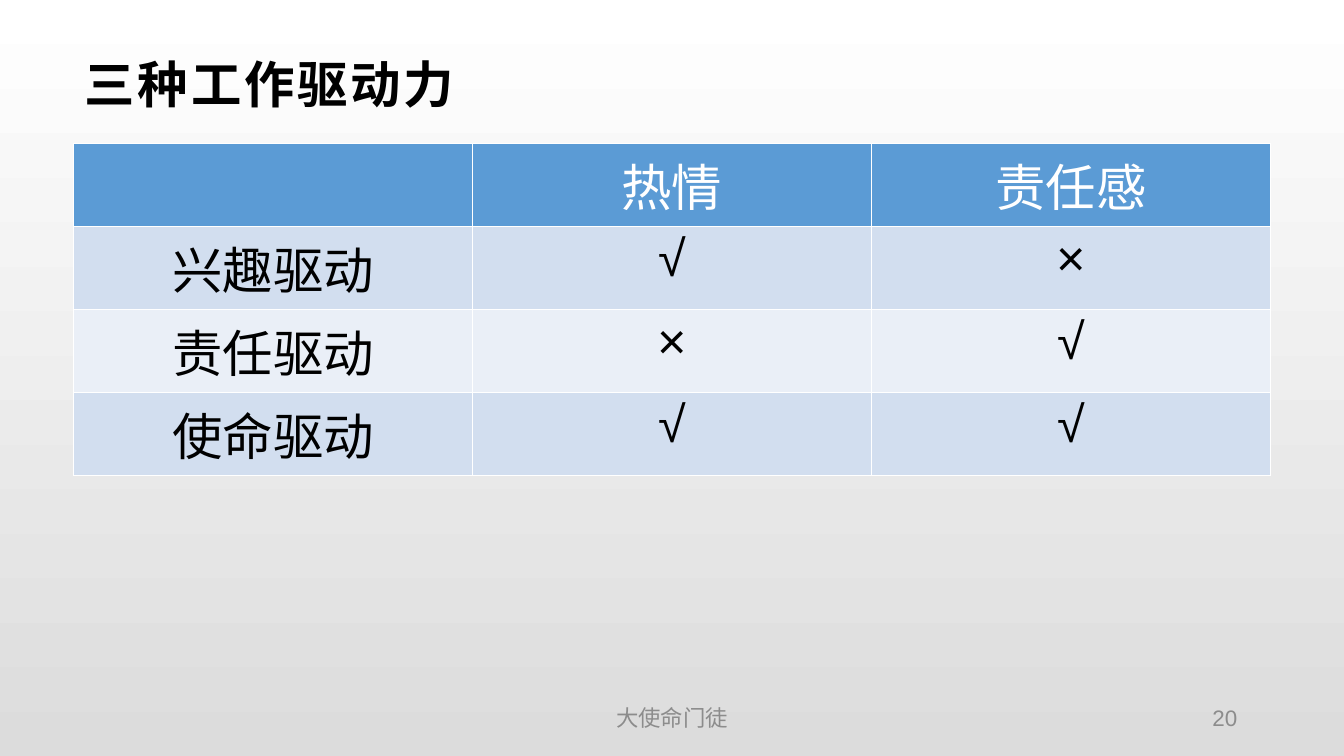
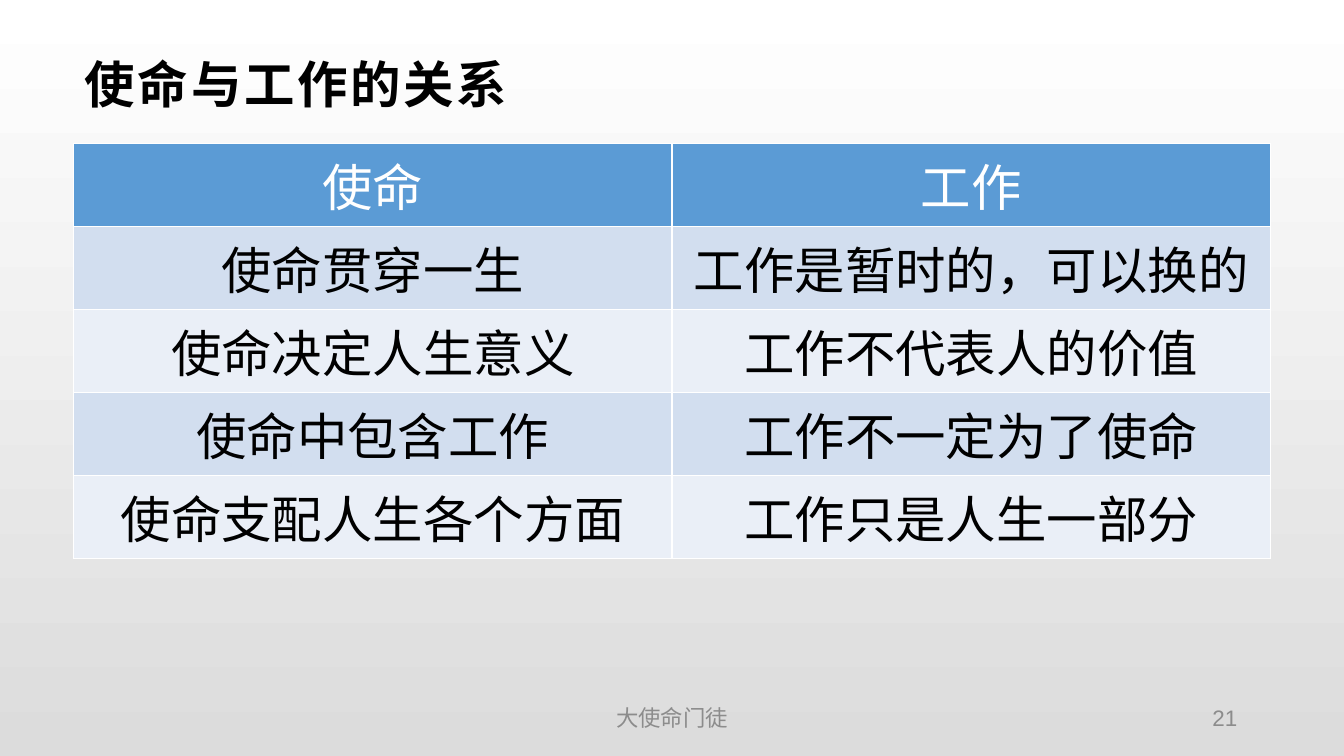
import pptx
import pptx.util
import pptx.dml.color
import pptx.enum.text
import pptx.oxml
import pptx.oxml.ns

Inches = pptx.util.Inches
Align = pptx.enum.text.PP_ALIGN
Anchor = pptx.enum.text.MSO_ANCHOR

COLORS = {
    "white": "FFFFFF",
    "backdrop": "DCDCDC",
    "ink": "000000",
    "footer": "8C8C8C",
    "header": "5B9BD5",
    "odd_row": "D2DEEF",
    "even_row": "EAEFF7",
}
FONT = "Arial"
LEFT, WIDTH = 0.73, 11.87
TABLE_TOP, ROW_HEIGHT = 1.42, 0.7
FOOTER_TOP, FOOTER_HEIGHT = 6.94, 0.35
FOOTER_TEXT = "大使命门徒"
FIRST_NUMBER = 20

PAGES = [
    ("三种工作驱动力", [
        ["", "热情", "责任感"],
        ["兴趣驱动", "√", "×"],
        ["责任驱动", "×", "√"],
        ["使命驱动", "√", "√"],
    ]),
    ("使命与工作的关系", [
        ["使命", "工作"],
        ["使命贯穿一生", "工作是暂时的，可以换的"],
        ["使命决定人生意义", "工作不代表人的价值"],
        ["使命中包含工作", "工作不一定为了使命"],
        ["使命支配人生各个方面", "工作只是人生一部分"],
    ]),
]


def rgb(name):
    return pptx.dml.color.RGBColor.from_string(COLORS[name])


def write(frame, text, size, color, align, bold=False):
    frame.text = text
    para = frame.paragraphs[0]
    para.alignment = align
    for span in para.runs:
        span.font.name = FONT
        span.font.size = pptx.util.Pt(size)
        span.font.bold = bold
        span.font.color.rgb = rgb(color)


deck = pptx.Presentation()
deck.slide_width = Inches(13.33)
deck.slide_height = Inches(7.5)

backdrop = deck.slide_master.background.fill
backdrop.gradient()
backdrop.gradient_angle = 270
for stop, color in zip(backdrop.gradient_stops, ("white", "backdrop")):
    stop.color.rgb = rgb(color)

for number, (heading, rows) in enumerate(PAGES, FIRST_NUMBER):
    page = deck.slides.add_slide(deck.slide_layouts.get_by_name("Title Only"))

    title = page.shapes.title
    title.left, title.top = Inches(LEFT), Inches(0.47)
    title.width, title.height = Inches(WIDTH), Inches(0.71)
    frame = title.text_frame
    frame.auto_size = pptx.enum.text.MSO_AUTO_SIZE.NONE
    frame.vertical_anchor = Anchor.MIDDLE
    frame.margin_left, frame.margin_right = Inches(0.11), Inches(0.08)
    frame.margin_top = frame.margin_bottom = Inches(0.04)
    write(frame, heading, 36, "ink", Align.LEFT, bold=True)
    for span in frame.paragraphs[0].runs:
        span.font._element.set("spc", "200")

    table = page.shapes.add_table(
        len(rows), len(rows[0]), Inches(LEFT), Inches(TABLE_TOP),
        Inches(WIDTH), Inches(ROW_HEIGHT * len(rows))).table
    for row_index, row in enumerate(rows):
        if row_index == 0:
            fill, ink = "header", "white"
        else:
            fill, ink = ("odd_row" if row_index % 2 else "even_row"), "ink"
        for column_index, text in enumerate(row):
            cell = table.cell(row_index, column_index)
            write(cell.text_frame, text, 36, ink, Align.CENTER)
            properties = cell._tc.get_or_add_tcPr()
            for side in ("lnL", "lnR", "lnT", "lnB"):
                properties.append(pptx.oxml.parse_xml(
                    f'<a:{side} {pptx.oxml.ns.nsdecls("a")} w="12700"><a:solidFill>'
                    f'<a:srgbClr val="{COLORS["white"]}"/></a:solidFill></a:{side}>'))
            cell.fill.solid()
            cell.fill.fore_color.rgb = rgb(fill)

    for left, width, text, align in (
        (9.42, 2.95, str(number), Align.RIGHT),
        (4.5, 4.33, FOOTER_TEXT, Align.CENTER),
    ):
        box = page.shapes.add_textbox(
            Inches(left), Inches(FOOTER_TOP), Inches(width), Inches(FOOTER_HEIGHT))
        box.text_frame.word_wrap = True
        box.text_frame.vertical_anchor = Anchor.MIDDLE
        write(box.text_frame, text, 16, "footer", align)

deck.save("out.pptx")
